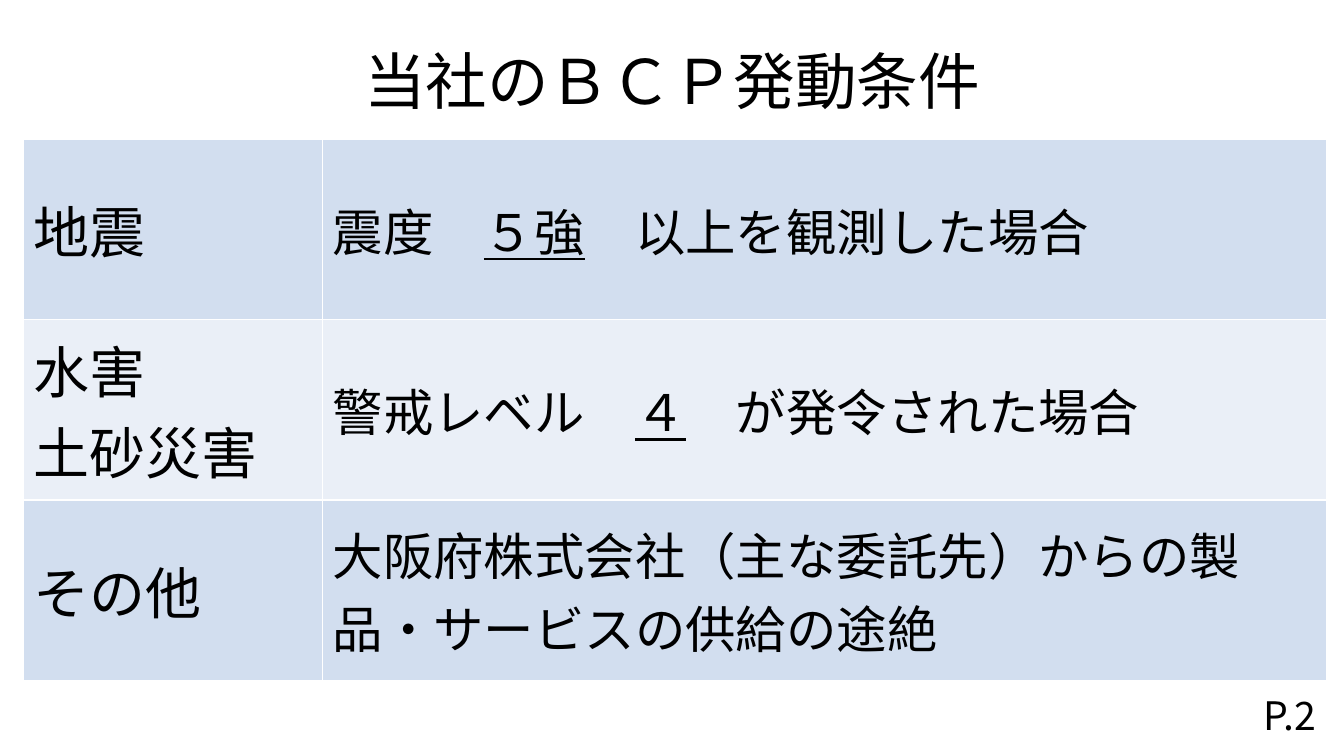
from lxml import etree
from pptx import Presentation
from pptx import util as u
from pptx.dml.color import RGBColor
from pptx.enum import text
from pptx.oxml import ns

PX = 9144  # EMU per px, 100 px to the inch
FONT = "Noto Sans CJK JP"
COLORS = {"text": "000000", "border": "FFFFFF", "odd": "D2DEEF", "even": "EAEFF7"}
HAZARD_SIZE, CONDITION_SIZE = 40, 36

# Each row: hazard, then the condition as (before, underlined value, after)
CONDITIONS = [
    ("地震", ("震度　", "５強", "　以上を観測した場合")),
    ("水害\n土砂災害", ("警戒レベル　", "４", "　が発令された場合")),
    ("その他", ("大阪府株式会社（主な委託先）からの製品・サービスの供給の途絶",)),
]


def px(length):
    return u.Emu(length * PX)


def format_runs(text_frame, size):
    for paragraph in text_frame.paragraphs:
        for run in paragraph.runs:
            run.font.size = u.Pt(size)
            run.font.name = FONT
            run.font.color.rgb = RGBColor.from_string(COLORS["text"])
            # East Asian typeface follows the Latin one
            east_asian = etree.SubElement(run.font._element, ns.qn("a:ea"))
            east_asian.set("typeface", FONT)


def add_label(slide, box, words, size, align, line_spacing=1.0):
    shape = slide.shapes.add_textbox(*map(px, box))
    text_frame = shape.text_frame
    text_frame.word_wrap = True
    text_frame.vertical_anchor = text.MSO_ANCHOR.MIDDLE
    text_frame.text = words
    paragraph = text_frame.paragraphs[0]
    paragraph.alignment = align
    paragraph.line_spacing = line_spacing
    format_runs(text_frame, size)


def style_cell(cell, fill):
    cell.vertical_anchor = text.MSO_ANCHOR.MIDDLE
    properties = cell._tc.get_or_add_tcPr()
    for side in ("lnL", "lnR", "lnT", "lnB"):
        line = etree.SubElement(properties, ns.qn(f"a:{side}"), w=str(u.Pt(1)))
        solid = etree.SubElement(line, ns.qn("a:solidFill"))
        etree.SubElement(solid, ns.qn("a:srgbClr"), val=COLORS["border"])
    cell.fill.solid()
    cell.fill.fore_color.rgb = RGBColor.from_string(COLORS[fill])


def fill_condition(cell, parts):
    paragraph = cell.text_frame.paragraphs[0]
    for index, part in enumerate(parts):
        run = paragraph.add_run()
        run.text = part
        if index == 1:
            run.font.underline = True


def add_condition_table(slide, left, top, widths, row_height):
    rows = len(CONDITIONS)
    table = slide.shapes.add_table(
        rows, len(widths), px(left), px(top), px(sum(widths)), px(row_height * rows)
    ).table
    table.first_row = False
    for column, width in zip(table.columns, widths):
        column.width = px(width)
    for index, (hazard, parts) in enumerate(CONDITIONS):
        table.rows[index].height = px(row_height)
        hazard_cell, condition_cell = table.cell(index, 0), table.cell(index, 1)
        hazard_cell.text_frame.text = hazard
        fill_condition(condition_cell, parts)
        for cell, size in ((hazard_cell, HAZARD_SIZE), (condition_cell, CONDITION_SIZE)):
            format_runs(cell.text_frame, size)
            style_cell(cell, "even" if index % 2 else "odd")


def main():
    presentation = Presentation()
    presentation.slide_width, presentation.slide_height = px(1333), px(750)
    slide = presentation.slides.add_slide(presentation.slide_layouts[6])

    # Title
    add_label(slide, (92, 11, 1150, 145), "当社のＢＣＰ発動条件", 44,
              text.PP_ALIGN.CENTER, 0.9)
    # Activation conditions by hazard
    add_condition_table(slide, 23, 138, (297, 996), 179)
    # Page number
    add_label(slide, (1015, 689, 300, 40), "P.2", 28, text.PP_ALIGN.RIGHT)

    presentation.save("out.pptx")


if __name__ == "__main__":
    main()
